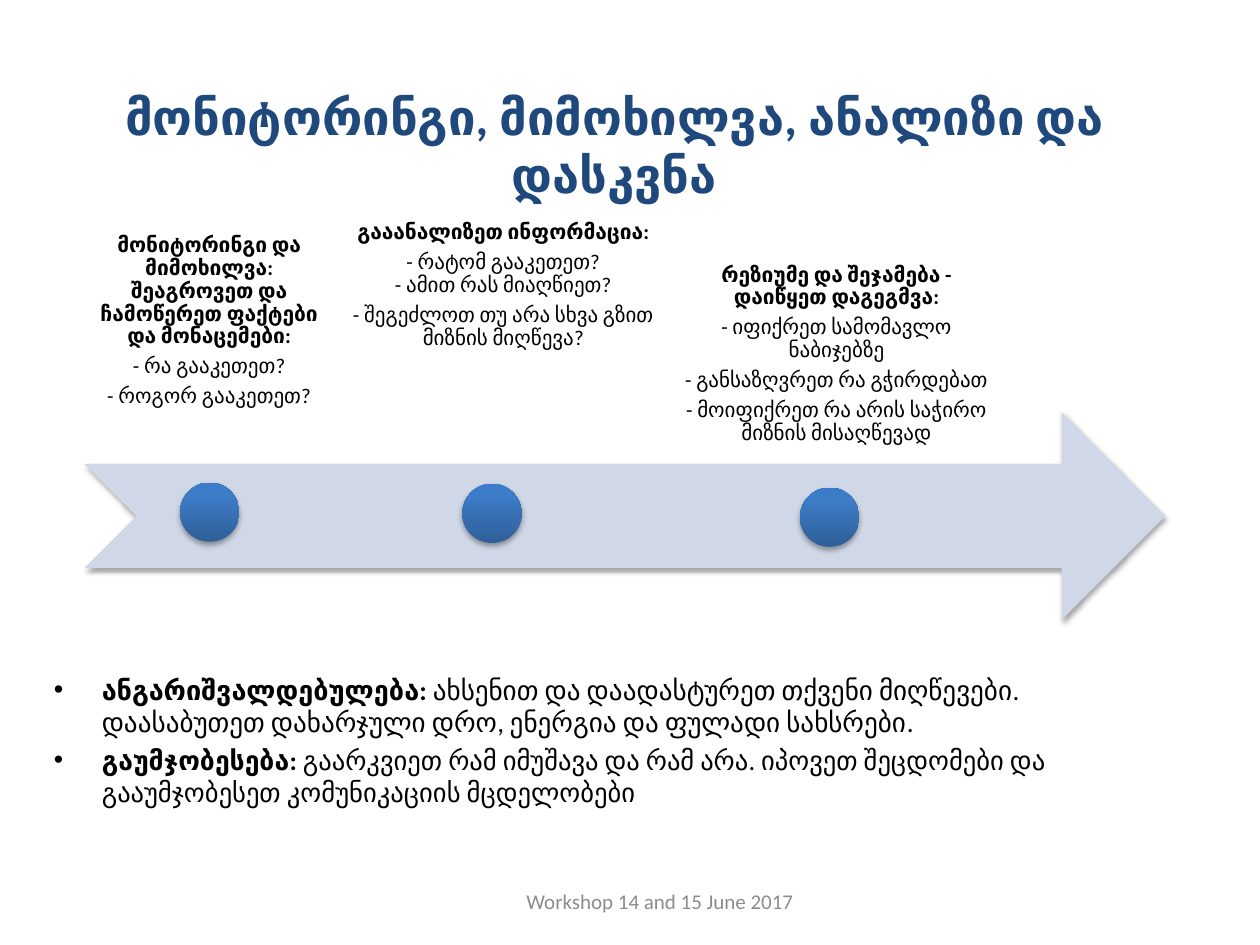
from dataclasses import dataclass

from lxml import etree
from pptx import Presentation
from pptx import util as u
from pptx.dml.color import RGBColor
from pptx.enum import shapes, text
from pptx.oxml import parse_xml
from pptx.oxml.ns import nsdecls, qn

Inches, Pt = u.Inches, u.Pt


@dataclass(frozen=True)
class Theme:
    font: str = "Calibri"
    title: str = "1F497D"
    body: str = "000000"
    footer: str = "8C8C8C"
    arrow: str = "D0D8E8"
    dot_stops: tuple = ((0, "2F5F99"), (80, "3D7CC7"), (100, "3A7CCB"))
    title_size: float = 28
    stage_size: float = 12
    bullet_sizes: tuple = (15.5, 15.2)
    footer_size: float = 12


THEME = Theme()

# Heading, points, text box, anchor and dot position of each stage
STAGES = [
    ("მონიტორინგი და მიმოხილვა: შეაგროვეთ და ჩამოწერეთ ფაქტები და მონაცემები:",
     ["- რა გააკეთეთ?", "- როგორ გააკეთეთ?"],
     (0.67, 1.58, 1.98, 1.75), text.MSO_ANCHOR.BOTTOM, (1.43, 3.83)),
    ("გააანალიზეთ ინფორმაცია:",
     ["- რატომ გააკეთეთ?\n- ამით რას მიაღწიეთ?",
      "- შეგეძლოთ თუ არა სხვა გზით მიზნის მიღწევა?"],
     (2.51, 1.67, 2.97, 1.53), text.MSO_ANCHOR.TOP, (3.67, 3.84)),
    ("რეზიუმე და შეჯამება - დაიწყეთ დაგეგმვა:",
     ["- იფიქრეთ სამომავლო ნაბიჯებზე", "- განსაზღვრეთ რა გჭირდებათ",
      "- მოიფიქრეთ რა არის საჭირო მიზნის მისაღწევად"],
     (5.31, 1.75, 2.66, 1.87), text.MSO_ANCHOR.BOTTOM, (6.35, 3.87)),
]
DOT_SIZE = 0.47

BENEFITS = [
    ("ანგარიშვალდებულება:",
     " ახსენით და დაადასტურეთ თქვენი მიღწევები. "
     "დაასაბუთეთ დახარჯული დრო, ენერგია და ფულადი სახსრები."),
    ("გაუმჯობესება:",
     " გაარკვიეთ რამ იმუშავა და რამ არა. "
     "იპოვეთ შეცდომები და გააუმჯობესეთ კომუნიკაციის მცდელობები"),
]


def add_text_frame(slide, box, anchor=text.MSO_ANCHOR.MIDDLE):
    frame = slide.shapes.add_textbox(*map(Inches, box)).text_frame
    frame.word_wrap = True
    frame.vertical_anchor = anchor
    return frame


def style_runs(paragraph, size, color, bold=False):
    for run in paragraph.runs:
        run.font.name = THEME.font
        run.font.size = Pt(size)
        run.font.bold = bold
        run.font.color.rgb = RGBColor.from_string(color)


def add_line(slide, box, words, size, color, bold=False, align=None):
    paragraph = add_text_frame(slide, box).paragraphs[0]
    paragraph.text = words
    paragraph.alignment = align
    style_runs(paragraph, size, color, bold)


def add_raised_shape(slide, preset, box):
    """Add an unlined shape with a soft shadow below it."""
    shape = slide.shapes.add_shape(preset, *map(Inches, box))
    shape.line.fill.background()
    shape.fill.solid()
    shape.fill.fore_color.rgb = RGBColor.from_string(THEME.arrow)
    shape.shadow.inherit = False
    effects = shape.element.spPr.find(qn("a:effectLst"))
    effects.append(parse_xml(
        f'<a:outerShdw {nsdecls("a")} blurRad="{Pt(3.1)}" dist="{Pt(1.8)}" '
        'dir="5400000" rotWithShape="0"><a:srgbClr val="000000">'
        '<a:alpha val="35000"/></a:srgbClr></a:outerShdw>'))
    return shape


def add_dot(slide, left, top):
    dot = add_raised_shape(slide, shapes.MSO_SHAPE.OVAL,
                           (left, top, DOT_SIZE, DOT_SIZE))
    stops = "".join(f'<a:gs pos="{pos * 1000}"><a:srgbClr val="{color}"/></a:gs>'
                    for pos, color in THEME.dot_stops)
    properties = dot.element.spPr
    properties.replace(properties.find(qn("a:solidFill")), parse_xml(
        f'<a:gradFill {nsdecls("a")} rotWithShape="1"><a:gsLst>{stops}</a:gsLst>'
        '<a:lin ang="16200000" scaled="0"/></a:gradFill>'))


def add_stage_text(slide, box, anchor, heading, points):
    frame = add_text_frame(slide, box, anchor)
    frame.margin_left = frame.margin_right = Inches(0.09)
    frame.margin_top = frame.margin_bottom = Inches(0.09)
    for i, words in enumerate([heading, *points]):
        paragraph = frame.add_paragraph() if i else frame.paragraphs[0]
        paragraph.text = words
        paragraph.alignment = text.PP_ALIGN.CENTER
        paragraph.line_spacing = 0.9
        paragraph.space_after = Pt(4.2)
        style_runs(paragraph, THEME.stage_size, THEME.body, bold=i == 0)


def add_timeline(slide, box):
    add_raised_shape(slide, shapes.MSO_SHAPE.NOTCHED_RIGHT_ARROW, box)
    for heading, points, text_box, anchor, dot in STAGES:
        add_stage_text(slide, text_box, anchor, heading, points)
        add_dot(slide, *dot)


def add_benefits(slide, box):
    frame = add_text_frame(slide, box)
    for i, (term, explanation) in enumerate(BENEFITS):
        paragraph = frame.add_paragraph() if i else frame.paragraphs[0]
        properties = paragraph._p.get_or_add_pPr()
        properties.set("marL", str(Inches(0.38)))
        properties.set("indent", str(-Inches(0.38)))
        etree.SubElement(properties, qn("a:buFont"), typeface="Arial")
        etree.SubElement(properties, qn("a:buChar"), char="•")
        if i:
            paragraph.space_before = Pt(3.1)
        paragraph.text = term
        paragraph.add_run().text = explanation
        style_runs(paragraph, THEME.bullet_sizes[i], THEME.body)
        paragraph.runs[0].font.bold = True


def main():
    deck = Presentation()
    deck.slide_width, deck.slide_height = Inches(10), Inches(7.5)
    slide = deck.slides.add_slide(deck.slide_layouts[6])

    # Title and footer
    add_line(slide, (0.25, 0.75, 9.25, 0.8),
             "მონიტორინგი, მიმოხილვა, ანალიზი და დასკვნა",
             THEME.title_size, THEME.title, True, text.PP_ALIGN.CENTER)
    add_line(slide, (4.08, 6.95, 2.33, 0.4), "Workshop 14 and 15 June 2017",
             THEME.footer_size, THEME.footer)

    # Timeline and the benefits below it
    add_timeline(slide, (0.67, 3.27, 8.58, 1.65))
    add_benefits(slide, (0.33, 5.25, 9, 1.25))

    deck.save("out.pptx")


if __name__ == "__main__":
    main()
